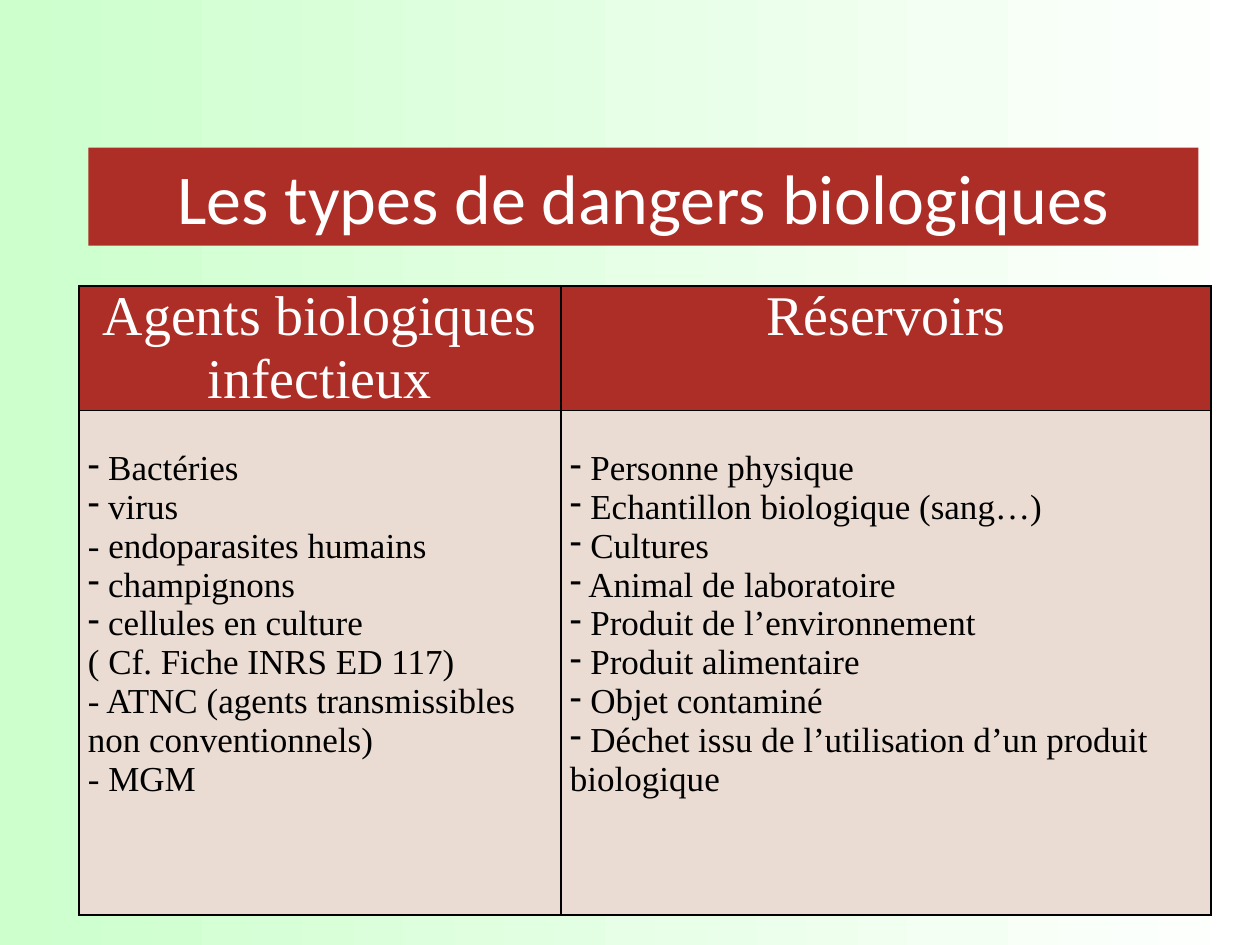
from lxml.etree import SubElement
from pptx import Presentation
from pptx.dml.color import RGBColor
from pptx.enum.shapes import MSO_SHAPE
from pptx.enum.text import MSO_ANCHOR, PP_ALIGN
from pptx.oxml.ns import qn
from pptx.util import Pt

COLORS = {"mint": "CCFFCC", "white": "FFFFFF", "red": "AD2E27",
          "beige": "EADCD2", "black": "000000"}
SERIF = "Times New Roman"
TITLE = "Les types de dangers biologiques"
HEADERS = ["Agents biologiques infectieux", "Réservoirs"]
AGENTS = [
    ("-", " Bactéries"),
    ("-", " virus"),
    ("", "- endoparasites humains"),
    ("-", " champignons"),
    ("-", " cellules en culture"),
    ("", "( Cf. Fiche INRS ED 117)"),
    ("", "- ATNC (agents transmissibles non conventionnels)"),
    ("", "- MGM"),
]
RESERVOIRS = [
    ("-", " Personne physique"),
    ("-", " Echantillon biologique (sang…)"),
    ("-", " Cultures"),
    ("-", " Animal de laboratoire"),
    ("-", " Produit de l’environnement"),
    ("-", " Produit alimentaire"),
    ("-", " Objet contaminé"),
    ("-", " Déchet issu de l’utilisation d’un produit biologique"),
]
COL_WIDTHS = [275.5, 371.5]
ROW_HEIGHTS = [71, 288.5]


def rgb(name):
    return RGBColor.from_string(COLORS[name])


def write(p, text, size, color, font=SERIF, align=PP_ALIGN.LEFT, bullet=""):
    p.alignment = align
    r = p.add_run()
    r.text = text
    r.font.size = Pt(size)
    r.font.name = font
    r.font.color.rgb = rgb(color)
    if bullet:
        pPr = p._p.get_or_add_pPr()
        pPr.set("marL", "0")
        pPr.set("indent", "0")
        SubElement(pPr, qn("a:buFontTx"))
        SubElement(pPr, qn("a:buChar"), char=bullet)


def style_cell(cell, fill, top=0):
    cell.margin_left = cell.margin_right = Pt(5.2)
    cell.margin_top, cell.margin_bottom = Pt(top), Pt(0)
    tcPr = cell._tc.get_or_add_tcPr()
    for side in ("L", "R", "T", "B"):
        ln = SubElement(tcPr, qn(f"a:ln{side}"), w=str(Pt(1)))
        solid = SubElement(ln, qn("a:solidFill"))
        SubElement(solid, qn("a:srgbClr"), val=COLORS["black"])
    cell.fill.solid()
    cell.fill.fore_color.rgb = rgb(fill)


prs = Presentation()
prs.slide_width, prs.slide_height = Pt(720), Pt(540)
s = prs.slides.add_slide(prs.slide_layouts[6])

bg = s.background.fill
bg.gradient()
bg.gradient_angle = 0
for stop, name, position in zip(bg.gradient_stops, ("mint", "white"), (0, 1)):
    stop.color.rgb = rgb(name)
    stop.position = position

sp = s.shapes.add_shape(MSO_SHAPE.RECTANGLE, Pt(50.5), Pt(84.4), Pt(634.4), Pt(56))
sp.shadow.inherit = False
sp.fill.solid()
sp.fill.fore_color.rgb = rgb("red")
sp.line.fill.background()
tf = sp.text_frame
tf.word_wrap = True
tf.vertical_anchor = MSO_ANCHOR.MIDDLE
write(tf.paragraphs[0], TITLE, 40, "white", font="Calibri", align=PP_ALIGN.CENTER)

table = s.shapes.add_table(2, 2, Pt(45), Pt(163.4), Pt(sum(COL_WIDTHS)),
                           Pt(sum(ROW_HEIGHTS))).table
table.first_row = table.horz_banding = False
for row, height in zip(table.rows, ROW_HEIGHTS):
    row.height = Pt(height)
for i, (width, header, items) in enumerate(zip(COL_WIDTHS, HEADERS, (AGENTS, RESERVOIRS))):
    table.columns[i].width = Pt(width)
    head, body = table.cell(0, i), table.cell(1, i)
    style_cell(head, "red")
    write(head.text_frame.paragraphs[0], header, 32, "white", align=PP_ALIGN.CENTER)
    style_cell(body, "beige", top=22.2)
    tf = body.text_frame
    for n, (bullet, text) in enumerate(items):
        p = tf.add_paragraph() if n else tf.paragraphs[0]
        write(p, text, 20, "black", bullet=bullet)

prs.save("out.pptx")
